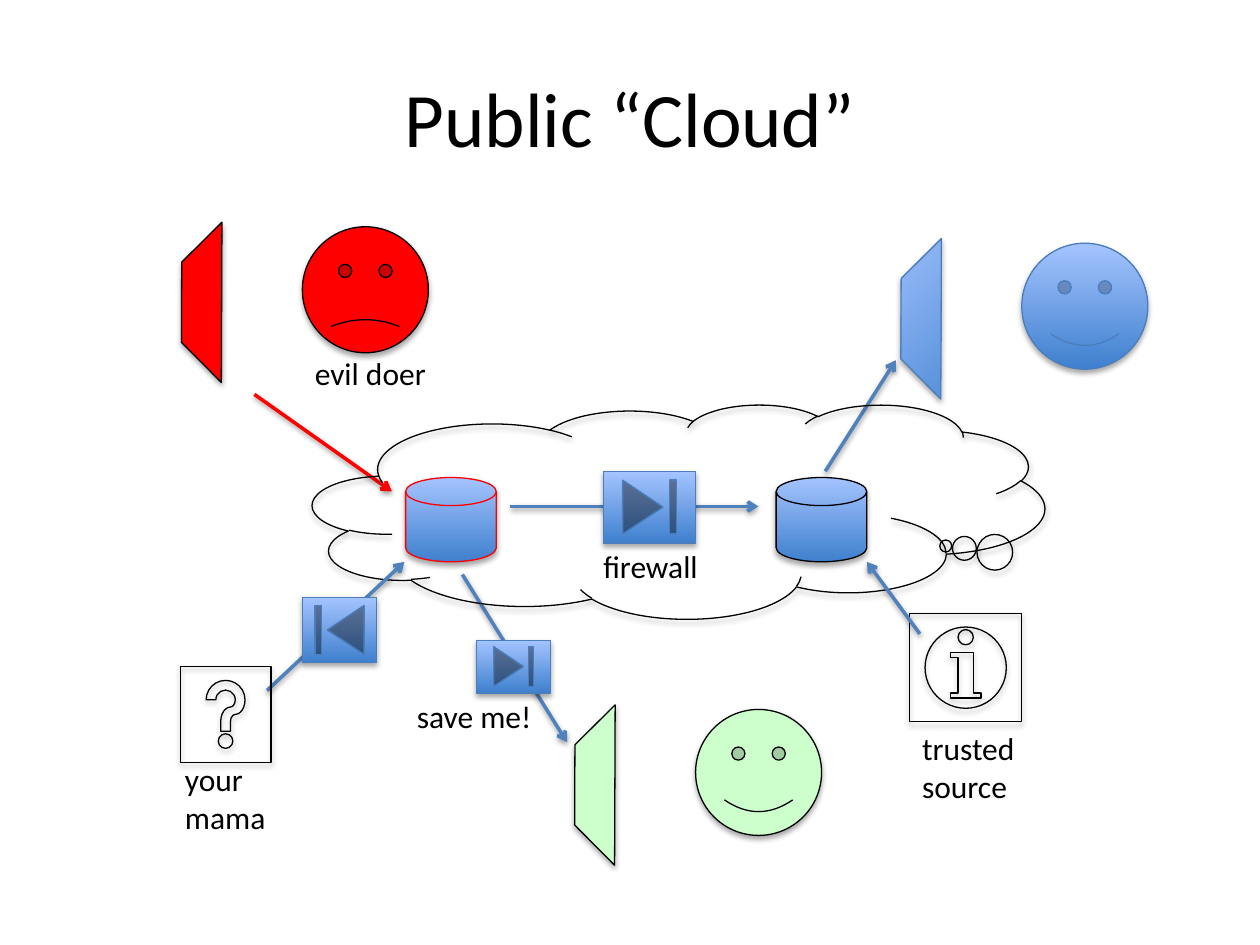
from lxml.etree import SubElement as Sub
from pptx import Presentation
from pptx.dml.color import RGBColor
from pptx.enum.shapes import MSO_CONNECTOR as Conn, MSO_SHAPE as Geo
from pptx.enum.text import MSO_ANCHOR as Anchor, MSO_AUTO_SIZE as Fit, PP_ALIGN as Align
from pptx.oxml.ns import qn
from pptx.util import Pt

BLACK, RED, MINT = "000000", "FF0000", "CCFFCC"
BLUE, EDGE = "4F81BD", "4B7EBC"
BLEND = ("3F80CE", "A4C4FF")  # bottom to top


def rgb(code):
    return RGBColor.from_string(code)


class Sketch:
    """Holds the style and the slide being drawn."""
    font = "Calibri"

    def __init__(self, deck):
        self.slide = deck.slides.add_slide(deck.slide_layouts[5])
        self.items = self.slide.shapes

    def fill_text(self, frame, text, size):
        para = frame.paragraphs[0]
        for i, line in enumerate(text.split("\n")):
            if i:
                para.add_line_break()
            run = para.add_run()
            run.text = line
            run.font.name, run.font.size = self.font, Pt(size)
            run.font.color.rgb = rgb(BLACK)
        return para

    def title(self, text, x, y, w, h):
        box = self.items.title
        box.left, box.top, box.width, box.height = map(Pt, (x, y, w, h))
        box.text_frame.vertical_anchor = Anchor.MIDDLE
        self.fill_text(box.text_frame, text, 44).alignment = Align.CENTER

    def label(self, text, x, y, w, h=28.8):
        frame = self.items.add_textbox(*map(Pt, (x, y, w, h))).text_frame
        frame.word_wrap = False
        frame.auto_size = Fit.SHAPE_TO_FIT_TEXT
        self.fill_text(frame, text, 18)

    def shade(self, item, dist, alpha):
        effects = Sub(item._element.spPr, qn("a:effectLst"))
        shadow = Sub(effects, qn("a:outerShdw"), blurRad=str(Pt(3.15)),
                     dist=str(Pt(dist)), dir="5400000", rotWithShape="0")
        tint = Sub(shadow, qn("a:srgbClr"), val=BLACK)
        Sub(tint, qn("a:alpha"), val=str(alpha * 1000))

    def shape(self, geo, x, y, w, h, fill=BLEND, line=EDGE, turn=0, adj=()):
        item = self.items.add_shape(geo, *map(Pt, (x, y, w, h)))
        item.rotation = turn
        for i, value in enumerate(adj):
            item.adjustments[i] = value
        if fill is None:
            item.fill.background()
        elif fill == BLEND:
            item.fill.gradient()
            item.fill.gradient_angle = 90
            for i, stop in enumerate(item.fill.gradient_stops):
                stop.position, stop.color.rgb = i, rgb(BLEND[i])
        else:
            item.fill.solid()
            item.fill.fore_color.rgb = rgb(fill)
        item.line.color.rgb, item.line.width = rgb(line), Pt(0.75)
        self.shade(item, 1.8, 35)

    def arrow(self, x1, y1, x2, y2, color=BLUE):
        item = self.items.add_connector(Conn.STRAIGHT, *map(Pt, (x1, y1, x2, y2)))
        item.line.color.rgb, item.line.width = rgb(color), Pt(2)
        Sub(item._element.spPr.find(qn("a:ln")), qn("a:tailEnd"), type="arrow")
        self.shade(item, 1.6, 38)

    def disk(self, x, line):
        self.shape(Geo.FLOWCHART_MAGNETIC_DISK, x, 272.9, 51.8, 48.2, line=line)

    def user(self, x, y, fill=BLEND, line=EDGE, smile=0.047):
        """A screen with a face to its right."""
        self.shape(Geo.DIAGONAL_STRIPE, x, y, 64.8, 64.8, fill, line, turn=315.2)
        self.shape(Geo.SMILEY_FACE, x + 78.5, y - 10.8, 72, 72, fill, line, adj=[smile])


def main():
    deck = Presentation()
    deck.slide_width, deck.slide_height = Pt(720), Pt(540)
    art = Sketch(deck)
    art.title("Public “Cloud”", 36, 21.6, 648, 90)

    # Users and their links to the stores
    art.disk(231.8, RED)
    art.user(505.4, 149.8)
    art.arrow(471.6, 269.3, 511.9, 205.9)
    art.user(319, 416.2, MINT, BLACK)
    art.arrow(264.2, 328.3, 324, 424.1)
    art.user(94.3, 140.4, RED, BLACK, -0.027)
    art.arrow(145.4, 225.4, 223.9, 280.8, RED)
    art.shape(Geo.ACTION_BUTTON_END, 272.2, 365.8, 42.5, 30.2)
    art.label("save me!", 231.1, 394.6, 81.4)

    # Firewall between the stores
    art.disk(443.5, BLACK)
    art.arrow(291.6, 289.4, 433.4, 289.4)
    art.shape(Geo.ACTION_BUTTON_END, 344.9, 269.3, 52.6, 41)
    art.label("firewall", 337.7, 308.9, 69.8)
    art.label("evil doer", 172.8, 198.7, 78.5)

    # Cloud and outside sources
    art.shape(Geo.CLOUD_CALLOUT, 178.6, 231.1, 418.3, 122.4, None, BLACK, adj=[0.365, 0.161])
    art.arrow(152.6, 394.6, 231.1, 321.1)
    art.shape(Geo.ACTION_BUTTON_HELP, 103, 380.9, 51.8, 54.7, None, BLACK)
    art.shape(Geo.ACTION_BUTTON_INFORMATION, 519.8, 350.6, 64.1, 61.9, None, BLACK)
    art.arrow(525.6, 362.2, 495.4, 321.1)
    art.label("trusted\nsource", 519.8, 413.3, 68.4, 51)
    art.label("your\nmama", 98.6, 430.6, 61.2, 51)
    art.shape(Geo.ACTION_BUTTON_BEGINNING, 172.8, 341.3, 42.5, 37.4)

    deck.save("out.pptx")


if __name__ == "__main__":
    main()
